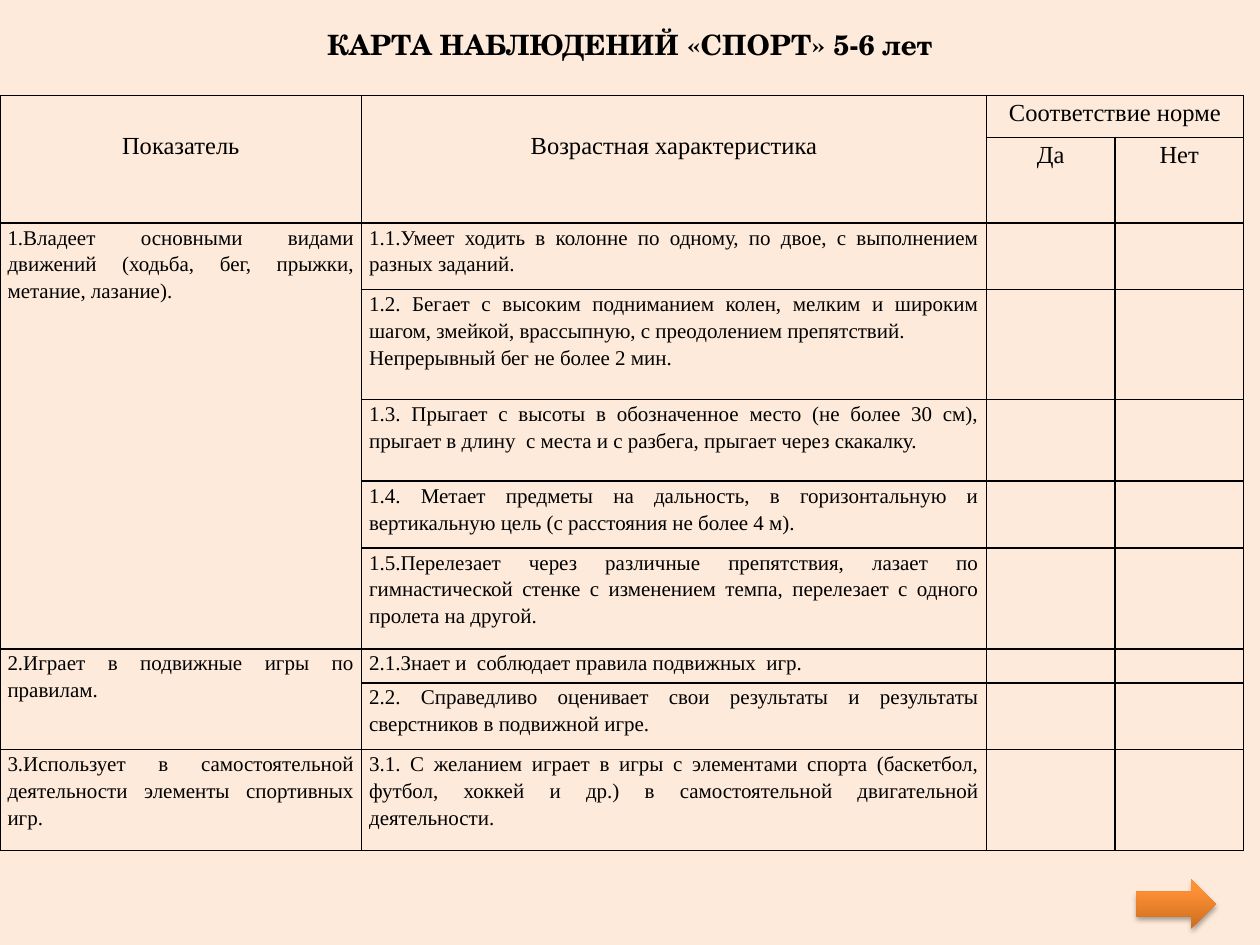
from dataclasses import dataclass

from lxml import etree
from pptx import Presentation
from pptx import util as u
from pptx.dml.color import RGBColor
from pptx.enum import shapes, text
from pptx.oxml.ns import qn


@dataclass(frozen=True)
class Theme:
    background: str = "FDEADA"
    ink: str = "000000"
    arrow_dark: str = "CC6E20"
    arrow_light: str = "FF9034"
    title_font: str = "TeX Gyre Schola"
    body_font: str = "Times New Roman"
    title_size: int = 16
    header_size: int = 14
    body_size: int = 12
    line_spacing: float = 1.15
    border: int = 1


THEME = Theme()
CENTER, JUSTIFY = text.PP_ALIGN.CENTER, text.PP_ALIGN.JUSTIFY
COLUMNS = (2.87, 4.96, 1.02, 1.02)
HEADER_ROWS = (0.33, 0.68)
HEADER_DROP = 0.26  # one header line

# Each indicator: its wording and (row height, characteristic) pairs
INDICATORS = (
    ("1.Владеет основными видами движений (ходьба, бег, прыжки, метание, лазание).", (
        (0.53, "1.1.Умеет ходить в колонне по одному, по двое, с выполнением разных заданий."),
        (0.87, "1.2. Бегает с высоким подниманием колен, мелким и широким шагом, змейкой, "
               "врассыпную, с преодолением препятствий.\nНепрерывный бег не более 2 мин."),
        (0.65, "1.3. Прыгает с высоты в обозначенное место (не более 30 см), "
               "прыгает в длину  с места и с разбега, прыгает через скакалку."),
        (0.53, "1.4. Метает предметы на дальность, в горизонтальную и вертикальную цель "
               "(с расстояния не более 4 м)."),
        (0.8, "1.5.Перелезает через различные препятствия, лазает по гимнастической стенке "
              "с изменением темпа, перелезает с одного пролета на другой."),
    )),
    ("2.Играет в подвижные игры по правилам.", (
        (0.27, "2.1.Знает и  соблюдает правила подвижных  игр."),
        (0.53, "2.2. Справедливо оценивает свои результаты и результаты сверстников "
               "в подвижной игре."),
    )),
    ("3.Использует в самостоятельной деятельности элементы спортивных игр.", (
        (0.8, "3.1. С желанием играет в игры с элементами спорта (баскетбол, футбол, хоккей "
              "и др.) в самостоятельной двигательной деятельности."),
    )),
)


def place(shape, box):
    shape.left, shape.top, shape.width, shape.height = (u.Inches(value) for value in box)


def format_run(run, font, size, bold=False):
    run.font.name, run.font.size, run.font.bold = font, u.Pt(size), bold
    run.font.color.rgb = RGBColor.from_string(THEME.ink)


def add_title(slide, box, wording):
    title = slide.shapes.title
    place(title, box)
    frame = title.text_frame
    frame.text = wording
    frame.word_wrap = True
    frame.auto_size = text.MSO_AUTO_SIZE.SHAPE_TO_FIT_TEXT
    frame.paragraphs[0].alignment = CENTER
    format_run(frame.paragraphs[0].runs[0], THEME.title_font, THEME.title_size, True)


def write_cell(cell, wording, size, alignment, drop=0):
    cell.text_frame.text = wording
    cell.margin_top = u.Inches(drop)
    for paragraph in cell.text_frame.paragraphs:
        paragraph.alignment = alignment
        paragraph.line_spacing = THEME.line_spacing
        for run in paragraph.runs:
            format_run(run, THEME.body_font, size)


def style_cell(cell):
    """Plain bordered cell whose empty text never stretches the row."""
    cell.margin_left = cell.margin_right = u.Inches(0.06)
    cell.margin_top = cell.margin_bottom = 0
    end = cell.text_frame.paragraphs[0]._p.get_or_add_endParaRPr()
    end.set("sz", str(THEME.body_size * 100))
    properties = cell._tc.get_or_add_tcPr()
    for side in ("lnL", "lnR", "lnT", "lnB"):
        line = etree.SubElement(properties, qn(f"a:{side}"), w=str(u.Pt(THEME.border)))
        fill = etree.SubElement(line, qn("a:solidFill"))
        etree.SubElement(fill, qn("a:srgbClr"), val=THEME.ink)
    cell.fill.background()


def write_header(table):
    for column, wording in enumerate(("Показатель", "Возрастная характеристика")):
        table.cell(0, column).merge(table.cell(1, column))
        write_cell(table.cell(0, column), wording, THEME.header_size, CENTER, HEADER_DROP)
    table.cell(0, 2).merge(table.cell(0, 3))
    for row, column, wording in ((0, 2, "Соответствие норме"), (1, 2, "Да"), (1, 3, "Нет")):
        write_cell(table.cell(row, column), wording, THEME.header_size, CENTER)


def write_indicators(table):
    row = len(HEADER_ROWS)
    for indicator, items in INDICATORS:
        if len(items) > 1:
            table.cell(row, 0).merge(table.cell(row + len(items) - 1, 0))
        write_cell(table.cell(row, 0), indicator, THEME.body_size, JUSTIFY)
        for _, characteristic in items:
            write_cell(table.cell(row, 1), characteristic, THEME.body_size, JUSTIFY)
            row += 1


def add_observation_table(slide, left, top):
    heights = HEADER_ROWS + tuple(height for _, items in INDICATORS for height, _ in items)
    box = (left, top, sum(COLUMNS), sum(heights))
    table = slide.shapes.add_table(len(heights), len(COLUMNS), *map(u.Inches, box)).table
    table.first_row = table.horz_banding = False
    for column, width in zip(table.columns, COLUMNS):
        column.width = u.Inches(width)
    for row, height in zip(table.rows, heights):
        row.height = u.Inches(height)
    for cell in table.iter_cells():
        style_cell(cell)
    write_header(table)
    write_indicators(table)


def add_next_arrow(slide, box):
    arrow = slide.shapes.add_shape(shapes.MSO_SHAPE.RIGHT_ARROW, *map(u.Inches, box))
    arrow.line.fill.background()
    arrow.fill.gradient()
    arrow.fill.gradient_angle = 90
    stops = ((0, THEME.arrow_dark), (0.8, THEME.arrow_light))
    for stop, (position, color) in zip(arrow.fill.gradient_stops, stops):
        stop.position = position
        stop.color.rgb = RGBColor.from_string(color)
    effects = etree.SubElement(arrow._element.spPr, qn("a:effectLst"))
    shadow = etree.SubElement(effects, qn("a:outerShdw"), blurRad=str(u.Pt(3.1)),
                              dist=str(u.Pt(1.8)), dir="5400000", rotWithShape="0")
    color = etree.SubElement(shadow, qn("a:srgbClr"), val=THEME.ink)
    etree.SubElement(color, qn("a:alpha"), val="35000")


def main():
    presentation = Presentation()
    presentation.slide_width, presentation.slide_height = u.Inches(10), u.Inches(7.5)
    slide = presentation.slides.add_slide(presentation.slide_layouts.get_by_name("Title Only"))
    slide.background.fill.solid()
    slide.background.fill.fore_color.rgb = RGBColor.from_string(THEME.background)
    add_title(slide, (0, 0.17, 10, 0.37), "КАРТА НАБЛЮДЕНИЙ «СПОРТ» 5-6 лет")
    add_observation_table(slide, 0, 0.76)
    add_next_arrow(slide, (9.02, 6.98, 0.63, 0.39))
    presentation.save("out.pptx")


if __name__ == "__main__":
    main()
